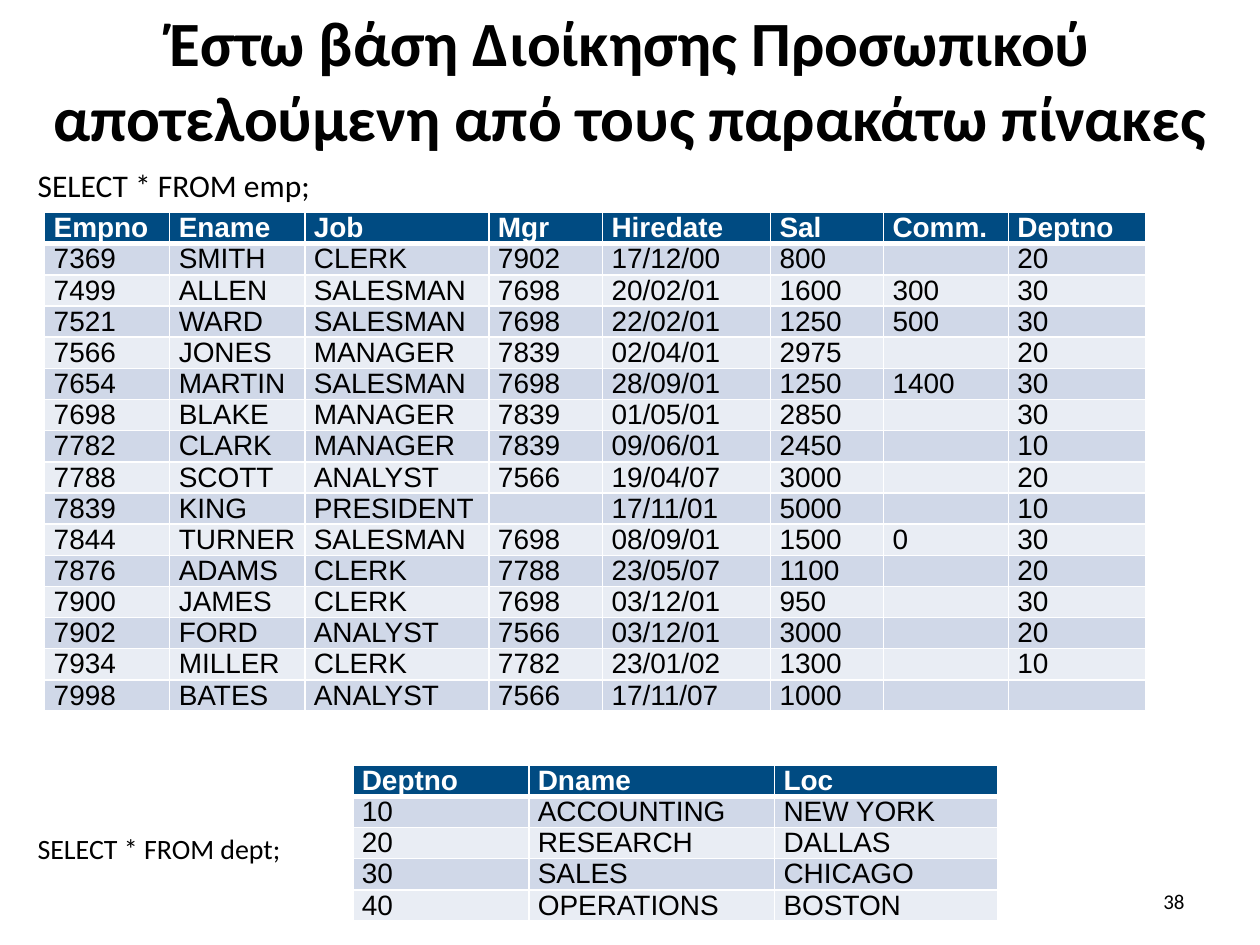
from lxml import etree
from pptx import Presentation
from pptx.dml.color import RGBColor
from pptx.enum import text
from pptx.oxml import ns
from pptx.util import Pt

COLORS = {"head": "004B82", "odd": "D0D8E8", "even": "E9EDF4",
          "white": "FFFFFF", "black": "000000"}

EMP = """Empno,Ename,Job,Mgr,Hiredate,Sal,Comm.,Deptno
7369,SMITH,CLERK,7902,17/12/00,800,,20
7499,ALLEN,SALESMAN,7698,20/02/01,1600,300,30
7521,WARD,SALESMAN,7698,22/02/01,1250,500,30
7566,JONES,MANAGER,7839,02/04/01,2975,,20
7654,MARTIN,SALESMAN,7698,28/09/01,1250,1400,30
7698,BLAKE,MANAGER,7839,01/05/01,2850,,30
7782,CLARK,MANAGER,7839,09/06/01,2450,,10
7788,SCOTT,ANALYST,7566,19/04/07,3000,,20
7839,KING,PRESIDENT,,17/11/01,5000,,10
7844,TURNER,SALESMAN,7698,08/09/01,1500,0,30
7876,ADAMS,CLERK,7788,23/05/07,1100,,20
7900,JAMES,CLERK,7698,03/12/01,950,,30
7902,FORD,ANALYST,7566,03/12/01,3000,,20
7934,MILLER,CLERK,7782,23/01/02,1300,,10
7998,BATES,ANALYST,7566,17/11/07,1000,,"""

DEPT = """Deptno,Dname,Loc
10,ACCOUNTING,NEW YORK
20,RESEARCH,DALLAS
30,SALES,CHICAGO
40,OPERATIONS,BOSTON"""

ROW = 17.82


def style(par, size, font="Calibri", color="black", bold=False):
    for run in par.runs:
        run.font.size = Pt(size)
        run.font.name = font
        run.font.bold = bold
        run.font.color.rgb = RGBColor.from_string(COLORS[color])


def border(cell, side, width):
    """Draw one white edge; call before the cell is filled."""
    line = etree.SubElement(cell._tc.get_or_add_tcPr(), ns.qn("a:ln" + side),
                            w=str(Pt(width)))
    fill = etree.SubElement(line, ns.qn("a:solidFill"))
    etree.SubElement(fill, ns.qn("a:srgbClr"), val=COLORS["white"])


deck = Presentation()
deck.slide_width, deck.slide_height = Pt(720), Pt(540)
slide = deck.slides.add_slide(deck.slide_layouts[6])

# Tables: left, top, column widths, rows
tables = [
    (25.5, 121.5, [71.5, 77.2, 105.2, 64.9, 96, 64.6, 71.4, 78.4], EMP),
    (201.6, 437.3, [100.6, 140.4, 127.4], DEPT),
]
for left, top, widths, source in tables:
    rows = [line.split(",") for line in source.splitlines()]
    table = slide.shapes.add_table(
        len(rows), len(widths), Pt(left), Pt(top),
        Pt(sum(widths)), Pt(ROW * len(rows))).table
    for col, width in zip(table.columns, widths):
        col.width = Pt(width)
    for r, values in enumerate(rows):
        table.rows[r].height = Pt(ROW)
        for c, value in enumerate(values):
            cell = table.cell(r, c)
            cell.margin_left = cell.margin_right = Pt(5.2)
            cell.margin_top = cell.margin_bottom = 0
            for side in "LRTB":
                thick = (r, side) in [(0, "B"), (1, "T")]
                border(cell, side, 3 if thick else 1)
            cell.fill.solid()
            shade = "head" if r == 0 else "odd" if r % 2 else "even"
            cell.fill.fore_color.rgb = RGBColor.from_string(COLORS[shade])
            par = cell.text_frame.paragraphs[0]
            if value:
                par.text = value
                style(par, 16, "Arial", "black" if r else "white", r == 0)
            else:
                # An empty cell needs the text size too, or its row grows
                end = etree.SubElement(par._p, ns.qn("a:endParaRPr"), sz="1600")
                etree.SubElement(end, ns.qn("a:latin"), typeface="Arial")

# Text: left, top, width, height, wording, size, bold, alignment, anchor, wrap
align, anchor = text.PP_ALIGN, text.MSO_ANCHOR
labels = [
    (0, 9.4, 720, 71.3,
     "Έστω βάση Διοίκησης Προσωπικού αποτελούμενη από τους παρακάτω πίνακες",
     36, True, align.CENTER, anchor.MIDDLE, True),
    (14.4, 91.4, 210.2, 29, "SELECT * FROM emp;",
     18, False, align.LEFT, anchor.TOP, True),
    (14.4, 471.6, 155.5, 26.6, "SELECT * FROM dept;",
     16, False, align.LEFT, anchor.TOP, False),
    (516.2, 500.4, 167.8, 28.8, "38",
     12, False, align.RIGHT, anchor.MIDDLE, True),
]
for left, top, width, height, words, size, bold, side, hold, wrap in labels:
    box = slide.shapes.add_textbox(Pt(left), Pt(top), Pt(width), Pt(height))
    frame = box.text_frame
    frame.word_wrap = wrap
    frame.vertical_anchor = hold
    frame.text = words
    frame.paragraphs[0].alignment = side
    style(frame.paragraphs[0], size, bold=bold)

deck.save("out.pptx")
